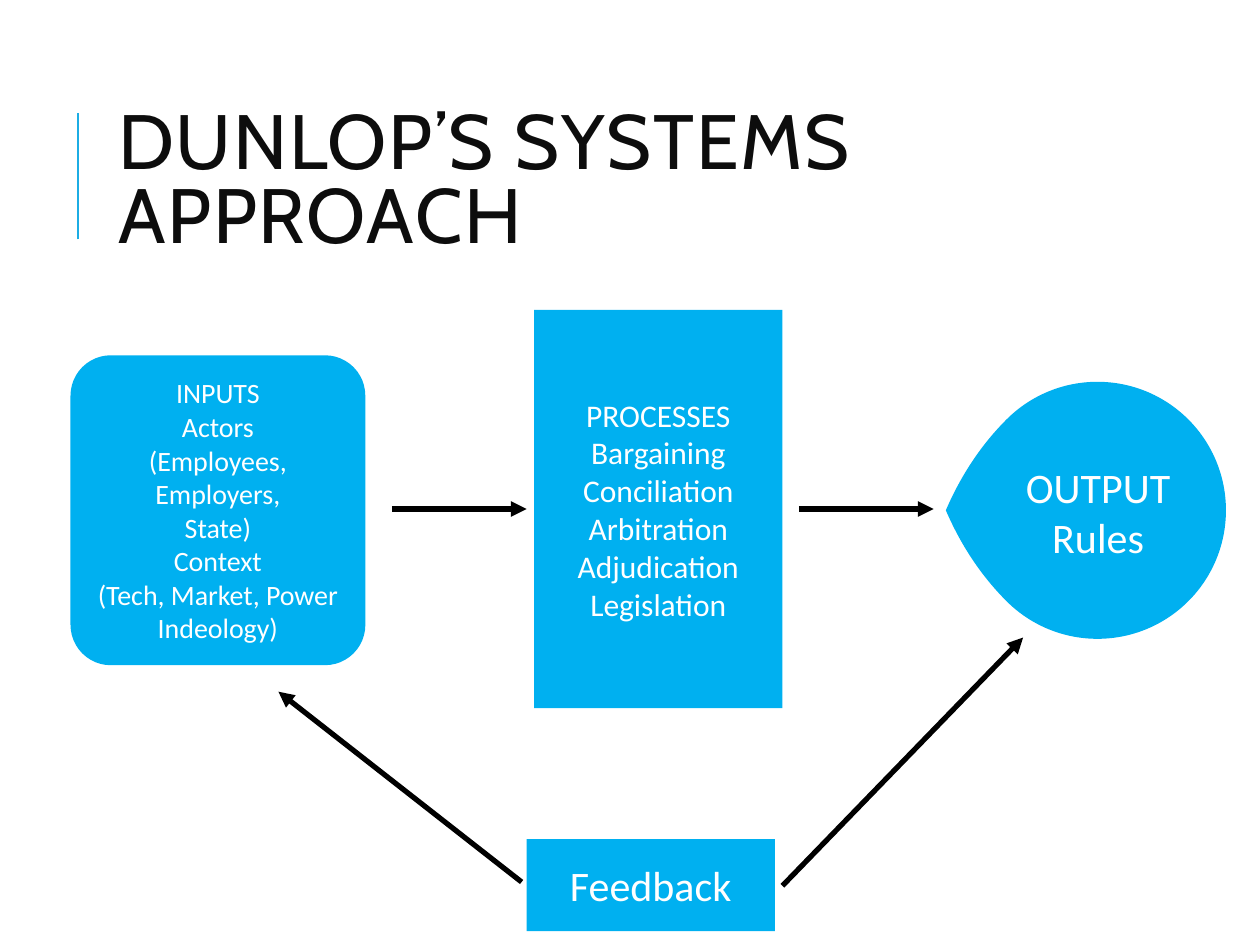
from pptx import Presentation
from pptx.dml.color import RGBColor
from pptx.enum.shapes import MSO_CONNECTOR as Connector, MSO_SHAPE as Shape
from pptx.enum.text import MSO_ANCHOR as Anchor, PP_ALIGN as Align
from pptx.oxml.ns import qn
from pptx.util import Inches, Pt
from lxml.etree import SubElement


def write(shape, text, font="Calibri", size=24, color="FFFFFF", align=Align.CENTER,
          anchor=Anchor.MIDDLE, line_spacing=None, tracking=None):
    frame = shape.text_frame
    frame.word_wrap = True
    frame.vertical_anchor = anchor
    frame.text = text
    for paragraph in frame.paragraphs:
        paragraph.alignment = align
        paragraph.line_spacing = line_spacing
        for run in paragraph.runs:
            run.font.name = font
            run.font.size = Pt(size)
            run.font.color.rgb = RGBColor.from_string(color)
            if tracking:
                run.font._element.set("spc", str(tracking))


def add_line(start, end, color="000000", width=3, arrow=True):
    line = slide.shapes.add_connector(Connector.STRAIGHT, *map(Inches, start + end))
    line.line.color.rgb = RGBColor.from_string(color)
    line.line.width = Pt(width)
    if arrow:
        SubElement(line.line._get_or_add_ln(), qn("a:tailEnd"), type="triangle")
    SubElement(line._element.spPr, qn("a:effectLst"))


presentation = Presentation()
presentation.slide_width = Inches(10)
presentation.slide_height = Inches(7.5)
slide = presentation.slides.add_slide(presentation.slide_layouts[6])

add_line((0.62, 1.9), (0.62, 0.9), color="1CADE4", width=1.5, arrow=False)
title = slide.shapes.add_textbox(*map(Inches, (0.84, 0.64, 7.97, 1.64)))
write(title, "DUNLOP’S SYSTEMS APPROACH", font="Cabin", size=44, color="0D0D0D",
      align=Align.LEFT, line_spacing=0.8, tracking=100)

inputs = "INPUTS\nActors\n(Employees, Employers,\nState)\nContext\n(Tech, Market, Power\nIndeology)"
processes = "PROCESSES\nBargaining\nConciliation\nArbitration\nAdjudication\nLegislation"
blocks = [
    (Shape.ROUNDED_RECTANGLE, (0.56, 2.82, 2.34, 2.46), 0.137, 0, inputs, 16),
    (Shape.ROUNDED_RECTANGLE, (4.24, 2.46, 1.97, 3.16), 0, 0, processes, 18),
    (Shape.TEAR, (7.69, 3.03, 2.04, 2.04), 0.834, 225, "", 24),
    (Shape.ROUNDED_RECTANGLE, (4.18, 6.66, 1.97, 0.73), 0, 0, "Feedback", 24),
]
for kind, box, adjustment, rotation, text, size in blocks:
    block = slide.shapes.add_shape(kind, *map(Inches, box))
    block.adjustments[0] = adjustment
    block.rotation = rotation
    block.shadow.inherit = False
    block.fill.solid()
    block.fill.fore_color.rgb = RGBColor.from_string("00B0F0")
    block.line.fill.background()
    if text:
        write(block, text, size=size)

output = slide.shapes.add_textbox(*map(Inches, (7.99, 3.61, 1.45, 0.91)))
write(output, "OUTPUT\nRules", anchor=Anchor.TOP)

arrows = [
    ((3.11, 4.04), (4.18, 4.04)),
    ((6.34, 4.04), (7.41, 4.04)),
    ((6.21, 7.03), (8.12, 5.06)),
    ((4.14, 7), (2.21, 5.49)),
]
for start, end in arrows:
    add_line(start, end)

presentation.save("out.pptx")
